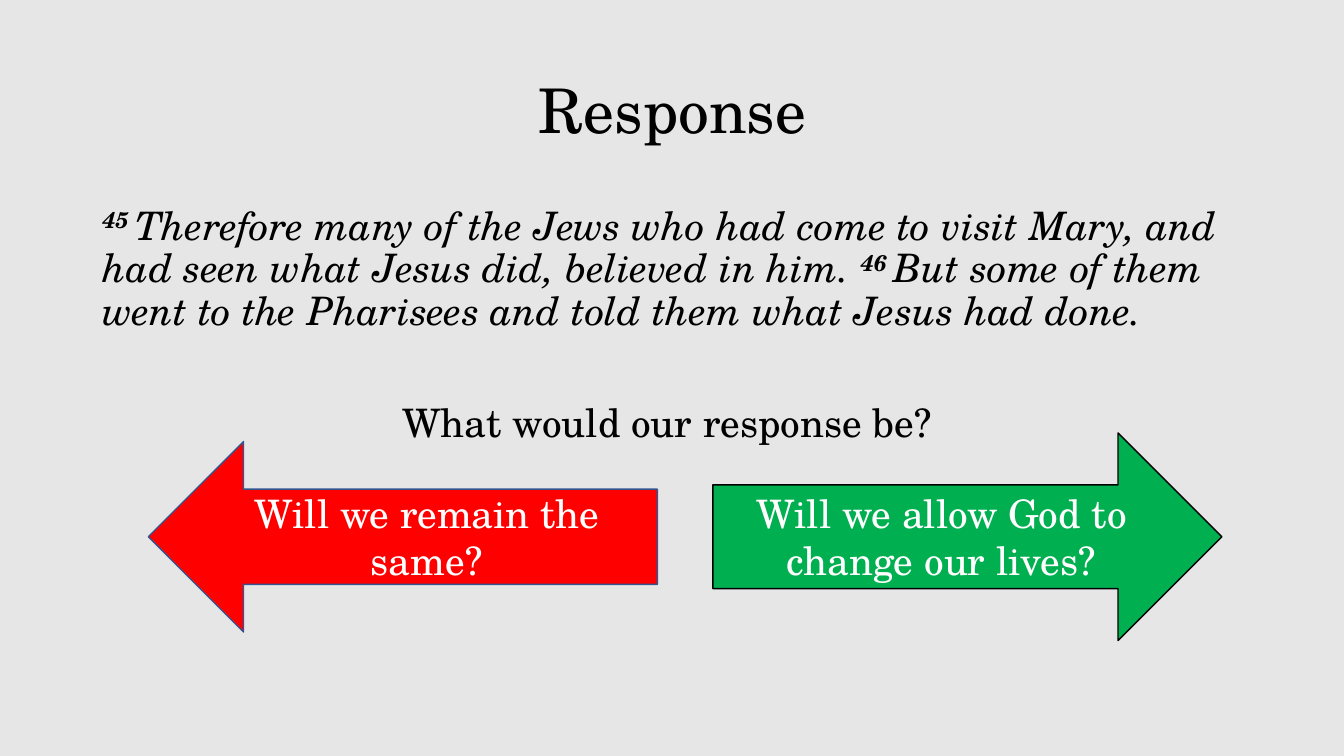
import pptx
import pptx.util
import pptx.dml.color
import pptx.enum.shapes
import pptx.enum.text
import lxml.etree

WIDE, HIGH = 13.33, 7.5
FACE = "TeX Gyre Schola"
BACK, INK = "E7E6E6", "000000"
LEFT, SPAN = 6.9, 86.27
MID = 71
HEAD = "Response"
VERSES = [
    ("45 ", "Therefore many of the Jews who had come to visit Mary, and had seen what Jesus did, believed in him. "),
    ("46 ", "But some of them went to the Pharisees and told them what Jesus had done."),
]
ASK = "What would our response be? "
KIND = pptx.enum.shapes.MSO_SHAPE
ARROWS = [
    (KIND.RIGHT_ARROW, 53.04, 27.47, "00B050", INK, "Will we allow God to change our lives?"),
    (KIND.LEFT_ARROW, 11.03, 25.2, "FF0000", "325491", "Will we remain the same?"),
]
ARROW_SPAN = 37.88
CENTER = pptx.enum.text.PP_ALIGN.CENTER
MIDDLE = pptx.enum.text.MSO_ANCHOR.MIDDLE
TOP = pptx.enum.text.MSO_ANCHOR.TOP


def color(code):
    return pptx.dml.color.RGBColor.from_string(code)


def place(left, top, width, height):
    shares = (left, WIDE), (top, HIGH), (width, WIDE), (height, HIGH)
    return [pptx.util.Inches(part * full / 100) for part, full in shares]


def style(para, size, code, align=None):
    para.font.name = FACE
    para.font.size = pptx.util.Pt(size)
    para.font.color.rgb = color(code)
    para.alignment = align


def space(para, before):
    para.line_spacing = 0.9
    para.space_before = pptx.util.Pt(before)


def box(slide, top, height, anchor):
    frame = slide.shapes.add_textbox(*place(LEFT, top, SPAN, height)).text_frame
    frame.word_wrap = True
    frame.vertical_anchor = anchor
    return frame


def title(slide):
    para = box(slide, 5.33, 19.33, MIDDLE).paragraphs[0]
    para.text = HEAD
    style(para, 44, INK, CENTER)
    space(para, 0)


def body(slide):
    frame = box(slide, 26.67, 63.47, TOP)
    verse = frame.paragraphs[0]
    for mark, words in VERSES:
        num = verse.add_run()
        num.text = mark
        num.font.bold = True
        num._r.get_or_add_rPr().set("baseline", "30000")
        verse.add_run().text = words
    style(verse, 28, INK)
    verse.font.italic = True
    space(verse, 10)
    ask = frame.add_paragraph()
    ask.text = ASK
    style(ask, 28, INK, CENTER)
    space(ask, 50)


def arrow(slide, kind, left, height, fill, edge, words):
    spot = place(left, MID - height / 2, ARROW_SPAN, height)
    shape = slide.shapes.add_shape(kind, *spot)
    shape.shadow.inherit = False
    shape.fill.solid()
    shape.fill.fore_color.rgb = color(fill)
    shape.line.color.rgb = color(edge)
    shape.line.width = pptx.util.Pt(1)
    frame = shape.text_frame
    frame.word_wrap = True
    frame.vertical_anchor = MIDDLE
    para = frame.paragraphs[0]
    para.text = words
    style(para, 28, "FFFFFF", CENTER)


def main():
    deck = pptx.Presentation()
    deck.slide_width = pptx.util.Inches(WIDE)
    deck.slide_height = pptx.util.Inches(HIGH)
    slide = deck.slides.add_slide(deck.slide_layouts[6])
    slide.background.fill.solid()
    slide.background.fill.fore_color.rgb = color(BACK)
    title(slide)
    body(slide)
    for item in ARROWS:
        arrow(slide, *item)
    deck.save("out.pptx")


if __name__ == "__main__":
    main()
